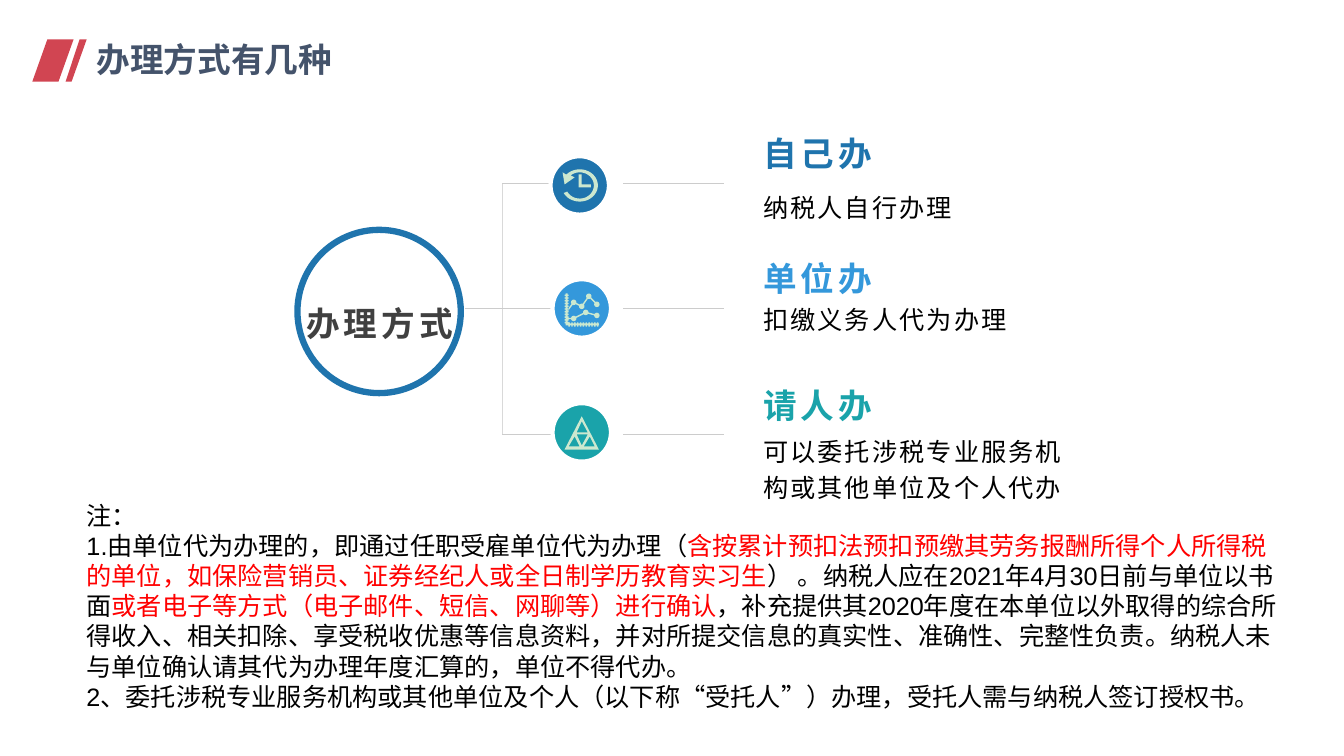
from math import cos, hypot, pi, radians, sin

from lxml import etree
from pptx import Presentation
from pptx.dml.color import RGBColor
from pptx.enum.shapes import MSO_CONNECTOR, MSO_SHAPE
from pptx.enum.text import MSO_ANCHOR, MSO_AUTO_SIZE, PP_ALIGN
from pptx.oxml.ns import qn
from pptx.util import Inches, Pt

CJK = "Noto Sans CJK SC"
RED, SLATE = RGBColor(0xD1, 0x45, 0x52), RGBColor(0x44, 0x53, 0x6B)
BLUE, SKY, TEAL = RGBColor(0x1F, 0x74, 0xAD), RGBColor(0x34, 0x98, 0xDB), RGBColor(0x1A, 0xA3, 0xAA)
MINT, WHITE, BLACK = RGBColor(0xCC, 0xE8, 0xCF), RGBColor(255, 255, 255), RGBColor(0, 0, 0)
DARK, ALERT = RGBColor(0x40, 0x40, 0x40), RGBColor(255, 0, 0)
GREY, LIGHT = RGBColor(0xCC, 0xCC, 0xCC), RGBColor(0xD9, 0xD9, 0xD9)

# Content
TITLE = "办理方式有几种"
HUB = "办理方式"
# heading, detail, colour, line y, badge (left, top), heading top, detail box, line spacing
BRANCHES = [
    ("自己办", "纳税人自行办理", BLUE, 1.82, (5.46, 1.55), 1.21, (7.47, 1.83, 3.47, 0.45), 1.1),
    ("单位办", "扣缴义务人代为办理", SKY, 3.06, (5.48, 2.77), 2.45, (7.47, 2.91, 3.39, 0.56), 1.2),
    ("请人办", "可以委托涉税专业服务机构或其他单位及个人代办", TEAL, 4.31, (5.48, 4.0), 3.71,
     (7.47, 4.22, 3.32, 0.51), 1.2),
]
NOTES = [
    [("注：", BLACK)],
    [("1.由单位代为办理的，即通过任职受雇单位代为办理（", BLACK),
     ("含按累计预扣法预扣预缴其劳务报酬所得个人所得税的单位，如保险营销员、证券经纪人或全日制学历教育实习生", ALERT),
     ("） 。纳税人应在2021年4月30日前与单位以书面", BLACK),
     ("或者电子等方式（电子邮件、短信、网聊等）进行确认", ALERT),
     ("，补充提供其2020年度在本单位以外取得的综合所得收入、相关扣除、享受税收优惠等信息资料，"
      "并对所提交信息的真实性、准确性、完整性负责。纳税人未与单位确认请其代为办理年度汇算的，单位不得代办。", BLACK)],
    [("2、委托涉税专业服务机构或其他单位及个人（以下称“受托人”）办理，受托人需与纳税人签订授权书。", BLACK)],
]
TITLE_BARS = [
    [(0.73, 0.39), (0.47, 0.39), (0.32, 0.81), (0.58, 0.81)],
    [(0.86, 0.39), (0.79, 0.39), (0.65, 0.81), (0.71, 0.81)],
]
TRIANGLES = [
    [(5.77, 4.13), (5.6, 4.46), (5.94, 4.46)],
    [(5.77, 4.18), (5.83, 4.29), (5.72, 4.29)],
    [(5.64, 4.43), (5.7, 4.33), (5.75, 4.43)],
    [(5.72, 4.31), (5.83, 4.31), (5.77, 4.42)],
    [(5.85, 4.33), (5.9, 4.43), (5.79, 4.43)],
]
# Each series starts on the axis; the other points carry dots
SERIES = [
    [(5.63, 3.08), (5.69, 3.0), (5.77, 3.04), (5.84, 2.94), (5.92, 3.02)],
    [(5.63, 3.16), (5.69, 3.16), (5.81, 3.1), (5.92, 3.13)],
]

prs = Presentation()
prs.slide_width, prs.slide_height = Inches(13.33), Inches(7.5)
s = prs.slides.add_slide(prs.slide_layouts[6])


def add_text(box, paragraphs, size=18, font=CJK, bold=False, spacing=None, char_space=0,
             align=None, anchor=MSO_ANCHOR.TOP, insets=(0.1, 0.05, 0.1, 0.05), grow=False):
    """Each paragraph is a list of (text, colour) runs."""
    tf = s.shapes.add_textbox(*map(Inches, box)).text_frame
    tf.word_wrap = True
    tf.auto_size = MSO_AUTO_SIZE.SHAPE_TO_FIT_TEXT if grow else MSO_AUTO_SIZE.NONE
    tf.vertical_anchor = anchor
    tf.margin_left, tf.margin_top, tf.margin_right, tf.margin_bottom = map(Inches, insets)
    for i, runs in enumerate(paragraphs):
        p = tf.add_paragraph() if i else tf.paragraphs[0]
        p.alignment, p.line_spacing = align, spacing
        for text, color in runs:
            r = p.add_run()
            r.text = text
            r.font.size, r.font.bold, r.font.name = Pt(size), bold, font
            r.font.color.rgb = color
            rpr = r.font._element
            etree.SubElement(rpr, qn("a:ea")).set("typeface", CJK)
            if char_space:
                rpr.set("spc", str(int(char_space * 100)))


def add_line(x1, y1, x2, y2, color=GREY):
    c = s.shapes.add_connector(MSO_CONNECTOR.STRAIGHT, *map(Inches, (x1, y1, x2, y2)))
    c.line.color.rgb, c.line.width = color, Pt(0.5)
    etree.SubElement(c._element.spPr, qn("a:effectLst"))


def add_circle(x, y, d, fill, line, width):
    sp = s.shapes.add_shape(MSO_SHAPE.OVAL, *map(Inches, (x, y, d, d)))
    sp.shadow.inherit = False
    sp.fill.solid()
    sp.fill.fore_color.rgb = fill
    sp.line.color.rgb, sp.line.width = line, Pt(width)


def add_outline(contours, color):
    contours = [[(Inches(x), Inches(y)) for x, y in c] for c in contours]
    fb = s.shapes.build_freeform(*contours[0][0])
    for i, c in enumerate(contours):
        if i:
            fb.move_to(*c[0])
        fb.add_line_segments(c[1:], close=True)
    sp = fb.convert_to_shape()
    sp.shadow.inherit = False
    sp.fill.solid()
    sp.fill.fore_color.rgb = color
    sp.line.fill.background()


def rect(x1, y1, x2, y2):
    return [(x1, y1), (x2, y1), (x2, y2), (x1, y2)]


def arc(cx, cy, rx, ry, start, end, steps=40):
    angles = [radians(start + (end - start) * i / steps) for i in range(steps + 1)]
    return [(cx + rx * cos(a), cy + ry * sin(a)) for a in angles]


def clock_icon():
    arrow = [(5.58, 1.71), (5.6, 1.83), (5.7, 1.76)]
    ring = arc(5.75, 1.84, 0.18, 0.16, 152, -138) + arrow + arc(5.75, 1.84, 0.14, 0.13, -130, 152)
    hands = [(5.74, 1.73), (5.77, 1.73), (5.77, 1.83), (5.86, 1.83), (5.86, 1.86), (5.74, 1.86)]
    return [ring, hands]


def plot_icon(dot=0.027, half=0.007, ticks=11):
    parts = [rect(5.61, 2.91, 5.63, 3.23), rect(5.63, 3.21, 5.94, 3.23)]
    for i in range(ticks):
        x, y = 5.645 + 0.0283 * i, 2.93 + 0.0272 * i
        parts += [rect(5.6, y - half, 5.61, y + half), rect(5.63, y - half, 5.64, y + half),
                  rect(x - half, 3.2, x + half, 3.21), rect(x - half, 3.23, x + half, 3.24)]
    for points in SERIES:
        parts += [arc(x, y, dot, dot, 0, 360, 16)[:-1] for x, y in points[1:]]
        for i, ((x1, y1), (x2, y2)) in enumerate(zip(points, points[1:])):
            length = hypot(x2 - x1, y2 - y1)
            ux, uy = (x2 - x1) / length, (y2 - y1) / length
            gap = dot if i else 0
            x1, y1, x2, y2 = x1 + ux * gap, y1 + uy * gap, x2 - ux * dot, y2 - uy * dot
            nx, ny = -uy * half, ux * half
            parts.append([(x1 + nx, y1 + ny), (x2 + nx, y2 + ny), (x2 - nx, y2 - ny), (x1 - nx, y1 - ny)])
    return parts


# Title
for bar in TITLE_BARS:
    add_outline([bar], RED)
add_text((0.95, 0.38, 4.28, 0.42), [[(TITLE, SLATE)]], size=24, bold=True,
         insets=(0.01, 0.01, 0, 0), grow=True)

# Hub and trunk
add_line(4.61, 3.06, 4.98, 3.06)
add_circle(2.95, 2.28, 1.62, WHITE, BLUE, 4.5)
add_text((2.75, 2.88, 2.03, 0.58), [[(HUB, DARK)]], size=24, bold=True, spacing=1.2,
         char_space=3, align=PP_ALIGN.CENTER)
add_line(4.98, 1.82, 4.98, 4.31, LIGHT)

# Branches
icons = [clock_icon(), plot_icon(), TRIANGLES]
for (heading, detail, color, y, badge, top, box, spacing), icon in zip(BRANCHES, icons):
    add_line(4.98, y, 5.8, y)
    add_line(6.18, y, 7.18, y)
    add_circle(*badge, 0.58, color, WHITE, 3)
    add_outline(icon, MINT)
    add_text(box, [[(detail, BLACK)]], spacing=spacing, char_space=1.5)
    add_text((7.47, top, 3.32, 0.51), [[(heading, color)]], size=24, bold=True, spacing=1.2,
             char_space=3, anchor=MSO_ANCHOR.BOTTOM, insets=(0.1, 0.05, 0.1, 0))

# Notes
add_text((0.76, 4.91, 12.1, 2.5), NOTES, font="Arial", grow=True)

prs.save("out.pptx")
